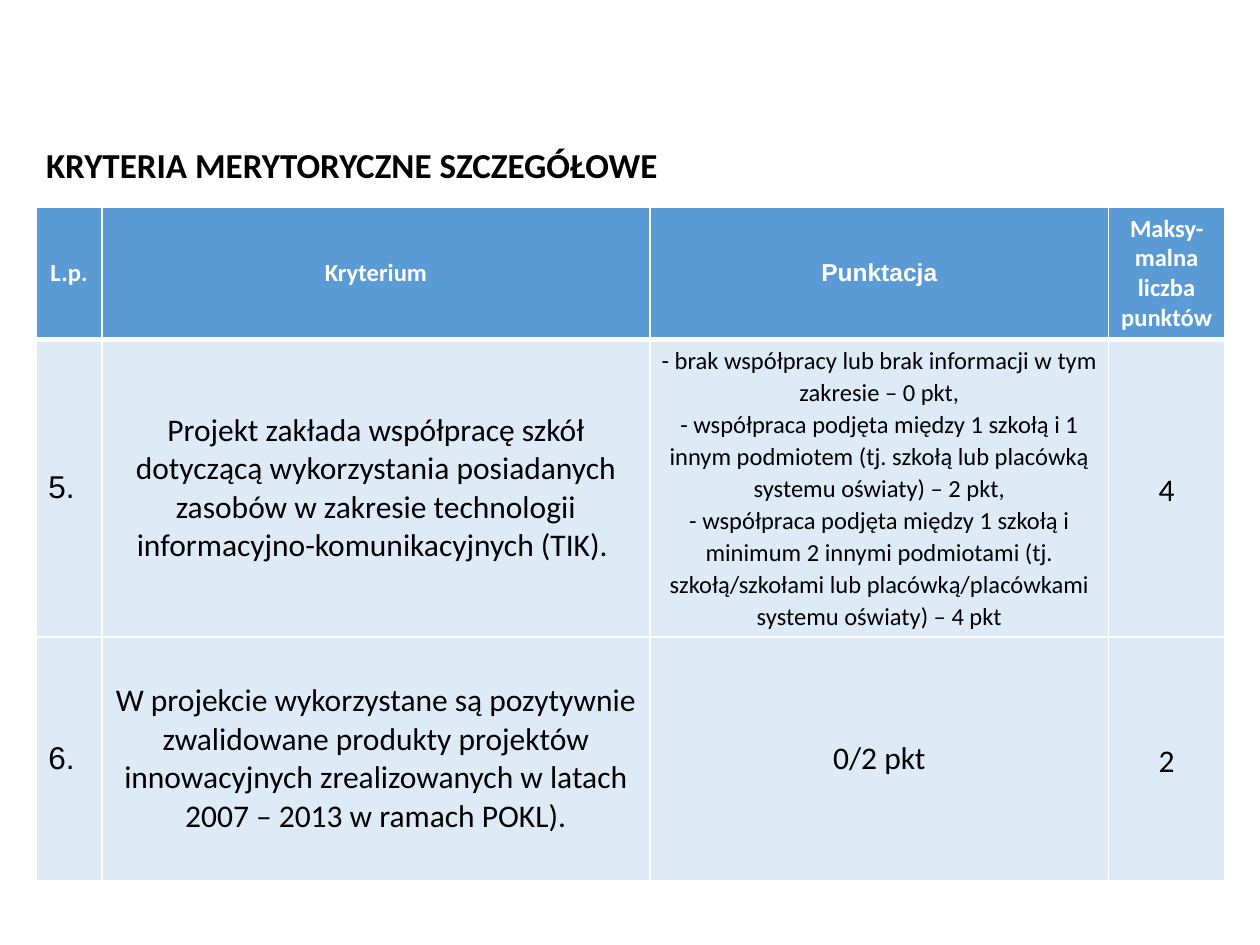
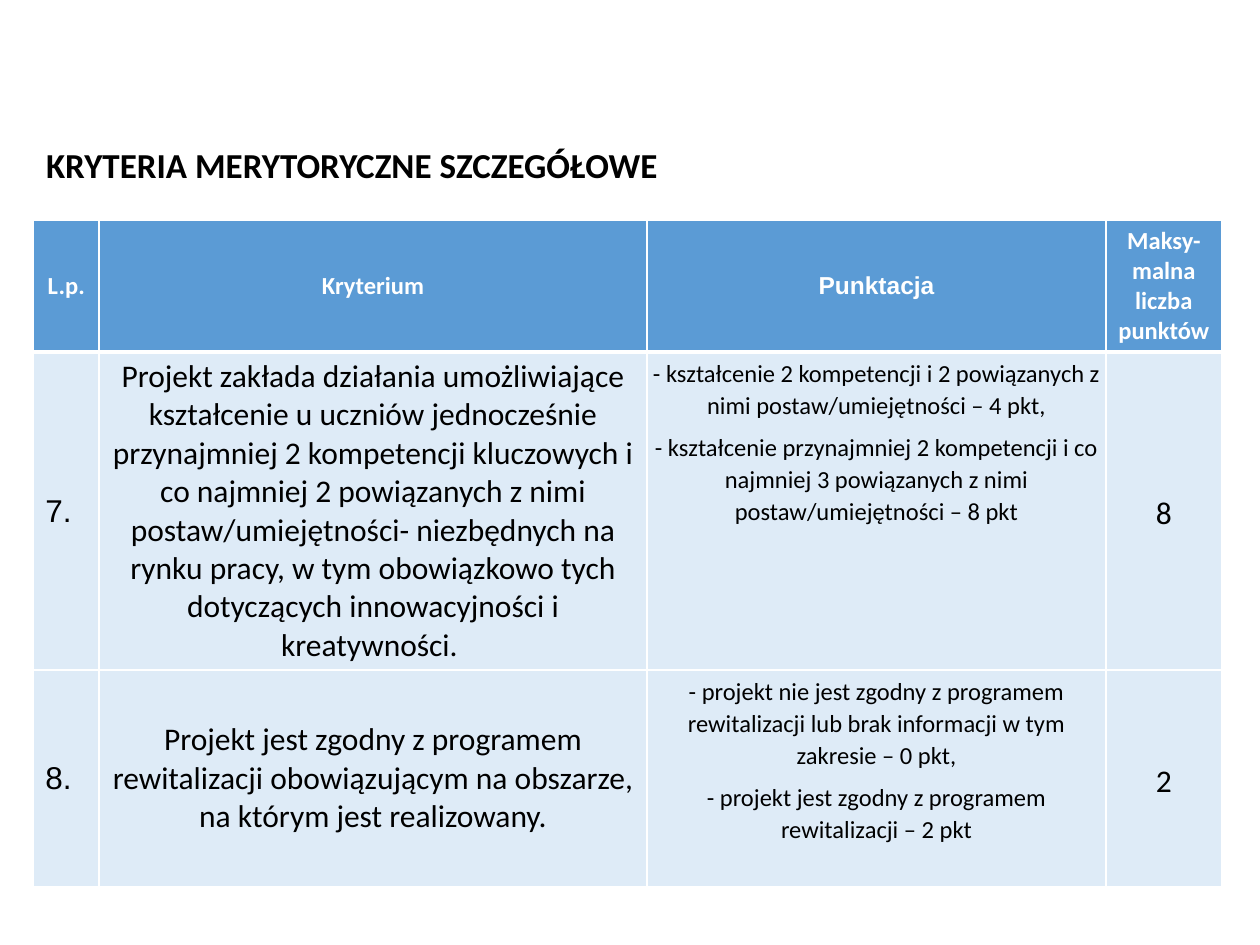
from lxml import etree
from pptx import Presentation
from pptx.dml.color import RGBColor
from pptx.enum.text import MSO_ANCHOR, MSO_AUTO_SIZE, PP_ALIGN
from pptx.oxml.ns import qn
from pptx.util import Pt

LEFT, CENTER = PP_ALIGN.LEFT, PP_ALIGN.CENTER
TOP, MIDDLE = MSO_ANCHOR.TOP, MSO_ANCHOR.MIDDLE
NO_AUTOSIZE = MSO_AUTO_SIZE.NONE
TITLE_ONLY = 5

COLORS = {"white": "FFFFFF", "black": "000000", "header": "5B9BD5", "body": "DEEBF7"}
FONT, ALT_FONT = "Calibri", "Arial"
TITLE = "KRYTERIA MERYTORYCZNE SZCZEGÓŁOWE"
HEADINGS = [
    ("L.p.", FONT),
    ("Kryterium", FONT),
    ("Punktacja", ALT_FONT),
    ("Maksy-malna liczba punktów", FONT),
]
COLUMN_WIDTHS = [37.4, 313.2, 262.2, 66.2]
SIDE_MARGIN, TIGHT_MARGIN = 6.8, 3
THIN, THICK = 1, 3

# Each criterion: number, description, scoring lines, maximum, scoring style
COMPACT = {"size": 14, "line_spacing": 1.07}
SPACED = {"size": 14, "line_spacing": 1.07, "gap": 6, "anchor": TOP}
PAGES = [
    {
        "left": 20.8, "top": 118.5, "heights": [74.5, 170, 139.5],
        "criteria": [
            ("5.",
             "Projekt zakłada współpracę szkół dotyczącą wykorzystania posiadanych "
             "zasobów w zakresie technologii informacyjno-komunikacyjnych (TIK). ",
             ["- brak współpracy lub brak informacji w tym zakresie – 0 pkt,",
              "- współpraca podjęta między 1 szkołą i 1 innym podmiotem "
              "(tj. szkołą lub placówką systemu oświaty) – 2 pkt,",
              "- współpraca podjęta między 1 szkołą i minimum 2 innymi podmiotami "
              "(tj. szkołą/szkołami lub placówką/placówkami systemu oświaty) – 4 pkt"],
             "4", COMPACT),
            ("6.",
             "W projekcie wykorzystane są pozytywnie zwalidowane produkty projektów "
             "innowacyjnych zrealizowanych w latach 2007 – 2013 w ramach POKL).",
             ["0/2 pkt"], "2", {}),
        ],
    },
    {
        "left": 19.2, "top": 125.8, "heights": [74.5, 181.5, 124],
        "criteria": [
            ("7.",
             "Projekt zakłada działania umożliwiające kształcenie u uczniów "
             "jednocześnie przynajmniej 2 kompetencji kluczowych i co najmniej "
             "2 powiązanych z nimi postaw/umiejętności- niezbędnych na rynku pracy, "
             "w tym obowiązkowo tych dotyczących innowacyjności i kreatywności. ",
             ["- kształcenie 2 kompetencji i 2 powiązanych z nimi "
              "postaw/umiejętności – 4 pkt,",
              "- kształcenie przynajmniej 2 kompetencji i co najmniej 3 powiązanych "
              "z nimi postaw/umiejętności – 8 pkt"],
             "8", SPACED),
            ("8.",
             "Projekt jest zgodny z programem rewitalizacji obowiązującym na "
             "obszarze, na którym jest realizowany.",
             ["- projekt nie jest zgodny z programem rewitalizacji lub brak "
              "informacji w tym zakresie – 0 pkt,",
              "- projekt jest zgodny z programem rewitalizacji – 2 pkt"],
             "2", SPACED),
        ],
    },
]


def add_span(para, text, size, font=FONT, color="black", bold=False):
    span = para.add_run()
    span.text = text
    span.font.size = Pt(size)
    span.font.name = font
    span.font.bold = bold
    span.font.color.rgb = RGBColor.from_string(COLORS[color])


def add_title(page):
    box = page.shapes.title
    box.left, box.top, box.width, box.height = Pt(19.1), Pt(78), Pt(373), Pt(32)
    frame = box.text_frame
    frame.auto_size = NO_AUTOSIZE
    frame.word_wrap = False
    frame.vertical_anchor = MIDDLE
    para = frame.paragraphs[0]
    para.alignment = LEFT
    add_span(para, TITLE, 20, bold=True)


def set_borders(cell, top=THIN, bottom=THIN):
    properties = cell._tc.get_or_add_tcPr()
    widths = {"a:lnL": THIN, "a:lnR": THIN, "a:lnT": top, "a:lnB": bottom}
    for index, (tag, width) in enumerate(widths.items()):
        line = etree.Element(qn(tag), w=str(Pt(width)))
        fill = etree.SubElement(line, qn("a:solidFill"))
        etree.SubElement(fill, qn("a:srgbClr"), val=COLORS["white"])
        properties.insert(index, line)


def fill_cell(cell, lines, size=18, font=FONT, color="black", bold=False, fill="body",
              align=CENTER, anchor=MIDDLE, line_spacing=1.0, gap=0, tight=True):
    cell.fill.solid()
    cell.fill.fore_color.rgb = RGBColor.from_string(COLORS[fill])
    cell.vertical_anchor = anchor
    cell.margin_left = cell.margin_right = Pt(TIGHT_MARGIN if tight else SIDE_MARGIN)
    if tight:
        cell.margin_top = cell.margin_bottom = Pt(TIGHT_MARGIN)
    frame = cell.text_frame
    for index, text in enumerate(lines):
        para = frame.add_paragraph() if index else frame.paragraphs[0]
        para.alignment = align
        para.line_spacing = line_spacing
        if index and gap:
            para.space_before = Pt(gap)
        add_span(para, text, size, font, color, bold)


def add_criteria_table(page, left, top, heights, criteria):
    table = page.shapes.add_table(
        len(heights), len(COLUMN_WIDTHS), Pt(left), Pt(top),
        Pt(sum(COLUMN_WIDTHS)), Pt(sum(heights))).table
    table.horz_banding = False
    for column, width in zip(table.columns, COLUMN_WIDTHS):
        column.width = Pt(width)
    for row, height in zip(table.rows, heights):
        row.height = Pt(height)

    # Header row
    for cell, (heading, font) in zip(table.rows[0].cells, HEADINGS):
        fill_cell(cell, [heading], 14, font, "white", True, "header", tight=False)
        set_borders(cell, bottom=THICK)

    # One row per criterion
    for index, (number, description, scoring, maximum, style) in enumerate(criteria, 1):
        cells = list(table.rows[index].cells)
        fill_cell(cells[0], [number], font=ALT_FONT, align=LEFT, tight=False)
        fill_cell(cells[1], [description])
        fill_cell(cells[2], scoring, **style)
        fill_cell(cells[3], [maximum], line_spacing=1.15)
        for cell in cells:
            set_borders(cell, top=THICK if index == 1 else THIN)


def main():
    deck = Presentation()
    deck.slide_width, deck.slide_height = Pt(720), Pt(540)
    for content in PAGES:
        page = deck.slides.add_slide(deck.slide_layouts[TITLE_ONLY])
        add_criteria_table(page, **content)
        add_title(page)
    deck.save("out.pptx")


if __name__ == "__main__":
    main()
